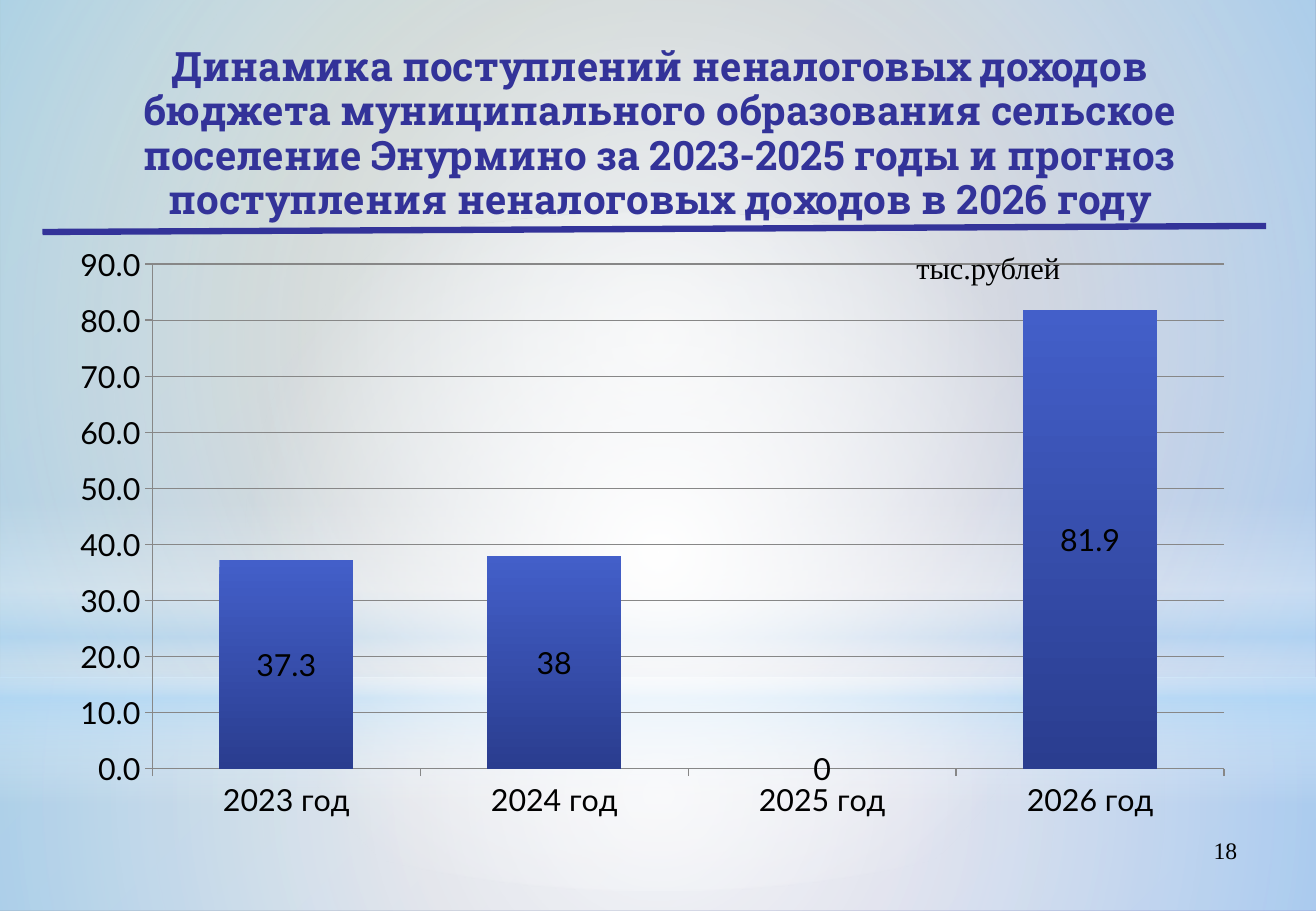
from lxml.etree import SubElement as Sub
from pptx import Presentation
from pptx.chart.data import CategoryChartData as Data
from pptx.dml.color import RGBColor as Rgb
from pptx.enum.chart import XL_CHART_TYPE as Kind, XL_LABEL_POSITION as Spot, XL_TICK_MARK as Tick
from pptx.enum.shapes import MSO_CONNECTOR as Link, MSO_SHAPE as Form
from pptx.enum.text import MSO_ANCHOR as Anchor, PP_ALIGN as Align
from pptx.oxml.ns import qn
from pptx.util import Inches, Pt

HUES = {
    "navy": "333399", "ink": "000000", "grid": "878787",
    "white": "FFFFFF", "sky": "B4DCFA",
    "sage": "96AB94", "lilac": "8488C4",
    "light": "435FC9", "deep": "2A3D8F",
}
SERIF = "Times New Roman"


def hue(name):
    return Rgb.from_string(HUES[name])


class Deck:
    def __init__(self, wide, high):
        self.prs = Presentation()
        self.prs.slide_width, self.prs.slide_height = Inches(wide), Inches(high)
        self.slide = self.prs.slides.add_slide(self.prs.slide_layouts[6])
        self.shapes = self.slide.shapes

    def blend(self, fill, root, stops, angle=None):
        fill.gradient()
        grad = root.find(".//" + qn("a:gradFill"))
        grad.clear()
        group = Sub(grad, qn("a:gsLst"))
        for place, name, alpha in stops:
            stop = Sub(group, qn("a:gs"), pos=str(place * 1000))
            tint = Sub(stop, qn("a:srgbClr"), val=HUES[name])
            if alpha < 100:
                Sub(tint, qn("a:alpha"), val=str(alpha * 1000))
        if angle is None:
            ring = Sub(grad, qn("a:path"), path="circle")
            Sub(ring, qn("a:fillToRect"), {side: "50000" for side in "ltrb"})
        else:
            Sub(grad, qn("a:lin"), ang=str(angle * 60000), scaled="0")

    def back(self, stops, angle):
        self.blend(self.slide.background.fill, self.slide.element, stops, angle)

    def glow(self, top, high, stops, angle=None, form=Form.RECTANGLE):
        shape = self.shapes.add_shape(
            form, 0, Inches(top), self.prs.slide_width, Inches(high))
        shape.shadow.inherit = False
        shape.line.fill.background()
        self.blend(shape.fill, shape.element, stops, angle)

    def text(self, box, words, size, face=SERIF, color="ink", bold=False,
             align=Align.LEFT, anchor=Anchor.TOP, wrap=True, space=None):
        frame = self.shapes.add_textbox(*map(Inches, box)).text_frame
        frame.word_wrap = wrap
        frame.vertical_anchor = anchor
        para = frame.paragraphs[0]
        para.text = words
        para.alignment = align
        para.line_spacing = space
        font = para.font
        font.name, font.size, font.bold = face, Pt(size), bold
        font.color.rgb = hue(color)

    def rule(self, start, end, color, width):
        line = self.shapes.add_connector(Link.STRAIGHT, *map(Inches, start + end))
        line.line.color.rgb = hue(color)
        line.line.width = Pt(width)
        Sub(line.element.spPr, qn("a:effectLst"))

    def chart(self, box, cats, vals, plot):
        data = Data()
        data.categories = cats
        data.add_series("Series 1", vals)
        chart = self.shapes.add_chart(
            Kind.COLUMN_STACKED, *map(Inches, box), data).chart
        chart.has_legend = chart.has_title = False
        chart.font.name, chart.font.size = "Lato", Pt(18)
        chart.font.color.rgb = hue("ink")
        self.place(chart, plot)

        scale = chart.value_axis
        scale.minimum_scale, scale.maximum_scale, scale.major_unit = 0, 90, 10
        scale.has_major_gridlines = True
        scale.tick_labels.number_format = "0.0"
        scale.tick_labels.number_format_is_linked = False
        for axis in (scale, chart.category_axis):
            axis.major_tick_mark = Tick.OUTSIDE
            axis.minor_tick_mark = Tick.NONE
        for part in (scale, chart.category_axis, scale.major_gridlines):
            part.format.line.color.rgb = hue("grid")
            part.format.line.width = Pt(0.75)

        bars = chart.plots[0]
        bars.gap_width, bars.overlap = 100, 100
        bars.vary_by_categories = False
        bars.has_data_labels = True
        labels = bars.data_labels
        labels.show_value = True
        labels.position = Spot.CENTER
        labels.number_format = "General"
        labels.number_format_is_linked = False
        row = bars.series[0]
        row.invert_if_negative = False
        self.blend(row.format.fill, row._element,
                   [(0, "light", 100), (100, "deep", 100)], 90)

    def place(self, chart, plot):
        area = chart._chartSpace.find(".//" + qn("c:plotArea"))
        old = area.find(qn("c:layout"))
        if old is not None:
            area.remove(old)
        layout = Sub(area, qn("c:layout"))
        area.insert(0, layout)
        manual = Sub(layout, qn("c:manualLayout"))
        marks = [("layoutTarget", "inner"), ("xMode", "edge"), ("yMode", "edge")]
        for tag, val in marks + list(zip("xywh", plot)):
            Sub(manual, qn("c:" + tag), val=str(val))


def main():
    deck = Deck(10.84, 7.5)
    deck.back([(0, "sage", 100), (100, "lilac", 100)], 45)
    deck.glow(5.58, 1.92, [(0, "white", 91), (37, "white", 76), (100, "sky", 79)])
    deck.glow(0, 5.58, [(0, "white", 89), (48, "white", 62), (100, "sky", 79)])
    deck.glow(4.12, 2.5, [(0, "white", 0), (29, "white", 30), (45, "sky", 40),
                          (55, "white", 26), (65, "sky", 60), (100, "white", 0)], 90)
    deck.glow(1.75, 5.58, [(0, "white", 100), (56, "white", 0)], form=Form.OVAL)

    deck.text((7.76, 6.83, 2.53, 0.52), "18", 14, align=Align.RIGHT)
    deck.text((0.56, 0.31, 9.75, 1.6),
              "Динамика поступлений неналоговых доходов бюджета муниципального "
              "образования сельское поселение Энурмино за 2023-2025 годы и прогноз "
              "поступления неналоговых доходов в 2026 году",
              24, "Roboto Slab", "navy", True, Align.CENTER, Anchor.MIDDLE, space=0.91)
    deck.rule((0.35, 1.91), (10.43, 1.86), "navy", 3.75)
    deck.chart((0.47, 1.93, 9.81, 4.89),
               [f"{year} год" for year in range(2023, 2027)],
               (37.3, 38, 0, 81.9), (0.08, 0.05, 0.9, 0.85))
    deck.text((7.45, 2, 1.4, 0.4), "тыс.рублей", 18, wrap=False)
    deck.prs.save("out.pptx")


if __name__ == "__main__":
    main()
